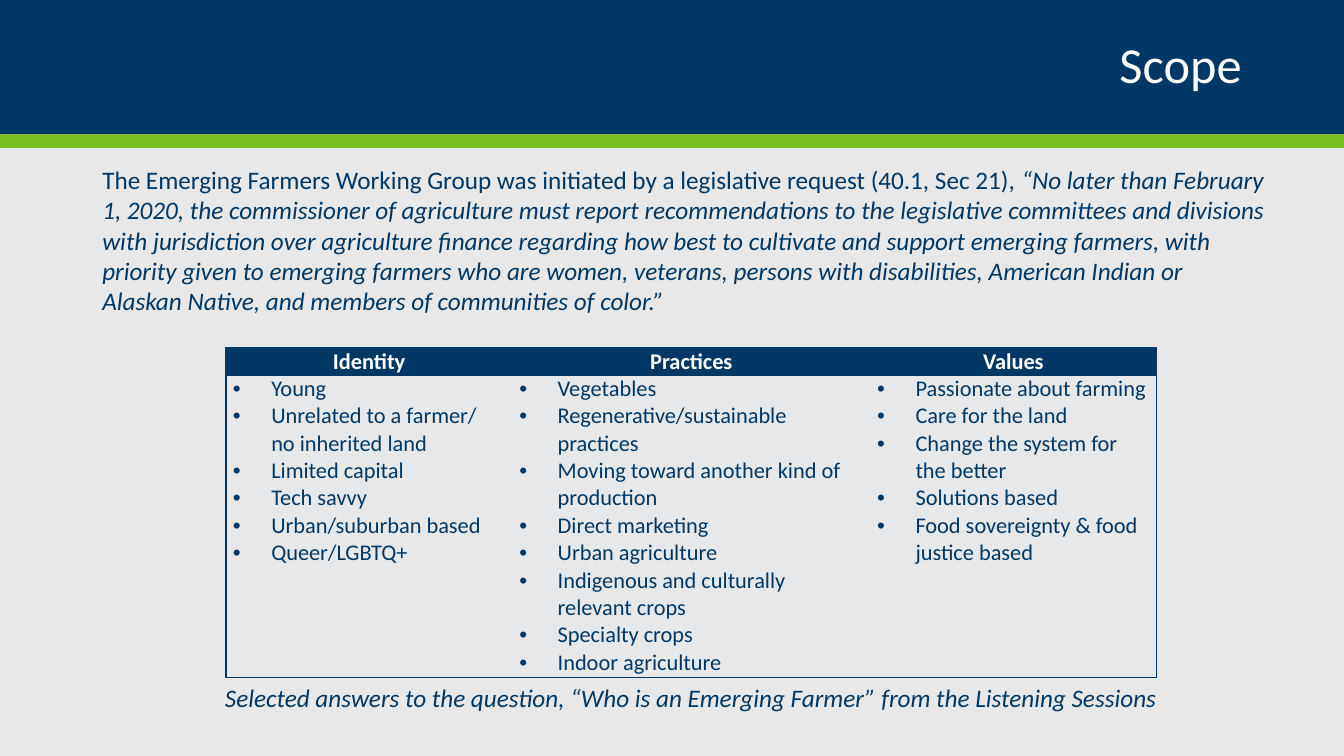
from pptx import Presentation, util as u
from pptx.dml.color import RGBColor
from pptx.enum import shapes, text
from pptx.oxml import parse_xml
from pptx.oxml.ns import nsdecls

theme = dict(navy="003865", green="78BE21", white="FFFFFF", page="E8E8E8",
             cell="E7E8EA", font="Calibri", title=36, body=18, table=16)

# A grid of 160 columns by 90 rows, each a twelfth of an inch
unit = u.Inches(1) / 12


def grid(*vals):
    return [u.Emu(round(v * unit)) for v in vals]


def style(par, size, color="navy", bold=False):
    font = par.font
    font.name, font.size, font.bold = theme["font"], u.Pt(theme[size]), bold
    font.color.rgb = RGBColor.from_string(theme[color])


deck = Presentation()
deck.slide_width, deck.slide_height = grid(160, 90)
slide = deck.slides.add_slide(deck.slide_layouts[6])
slide.background.fill.solid()
slide.background.fill.fore_color.rgb = RGBColor.from_string(theme["page"])

# Header band and stripe
for top, high, color in [(0, 16, "navy"), (16, 1.6, "green")]:
    band = slide.shapes.add_shape(shapes.MSO_SHAPE.RECTANGLE, *grid(0, top, 160, high))
    band.shadow.inherit = False
    band.fill.solid()
    band.fill.fore_color.rgb = RGBColor.from_string(theme[color])
    band.line.fill.background()

# Title, introduction and caption; each run is (wording, italic)
texts = [
    ((11, 2, 138, 12), "title", "white", [("Scope", False)]),
    ((11, 19, 141.1, 19.4), "body", "navy", [
        ("The Emerging Farmers Working Group was initiated by a legislative request "
         "(40.1, Sec 21), ", False),
        ("“No later than February 1, 2020, the commissioner of agriculture must report "
         "recommendations to the legislative committees and divisions with jurisdiction "
         "over agriculture finance regarding how best to cultivate and support emerging "
         "farmers, with priority given to emerging farmers who are women, veterans, "
         "persons with disabilities, American Indian or Alaskan Native, and members of "
         "communities of color.”", True)]),
    ((25.6, 80.6, 116.8, 4.8), "body", "navy", [
        ("Selected answers to the question, “Who is an Emerging Farmer” from the "
         "Listening Sessions", True)]),
]
for place, size, color, runs in texts:
    frame = slide.shapes.add_textbox(*grid(*place)).text_frame
    frame.word_wrap = True
    par = frame.paragraphs[0]
    style(par, size, color)
    for words, slant in runs:
        run = par.add_run()
        run.text, run.font.italic = words, slant
    if size == "title":
        frame.vertical_anchor = text.MSO_ANCHOR.MIDDLE
        par.alignment, par.line_spacing = text.PP_ALIGN.RIGHT, 0.9

# Table: one heading and one bulleted list per column
lists = {
    "Identity": ["Young", "Unrelated to a farmer/\nno inherited land", "Limited capital",
                 "Tech savvy", "Urban/suburban based", "Queer/LGBTQ+"],
    "Practices": ["Vegetables", "Regenerative/sustainable practices",
                  "Moving toward another kind of production", "Direct marketing",
                  "Urban agriculture", "Indigenous and culturally relevant crops",
                  "Specialty crops", "Indoor agriculture"],
    "Values": ["Passionate about farming", "Care for the land",
               "Change the system for the better", "Solutions based",
               "Food sovereignty & food justice based"],
}
wide, high = (34.1, 42.6, 34.1), (3.25, 36)
table = slide.shapes.add_table(2, 3, *grid(26.9, 41.4, sum(wide), sum(high))).table
for col, size in zip(table.columns, grid(*wide)):
    col.width = size
for row, size in zip(table.rows, grid(*high)):
    row.height = size

ink = f'<a:solidFill><a:srgbClr val="{theme["navy"]}"/></a:solidFill>'
for c, (head, items) in enumerate(lists.items()):
    for r, lines in enumerate([[head], items]):
        cell = table.cell(r, c)
        cell.margin_left = cell.margin_right = u.Inches(0.07)
        cell.margin_top = cell.margin_bottom = 0

        # Borders run around the outside and under the heading
        drawn = {"L": c == 0, "R": c == 2, "T": True, "B": True}
        for side, on in drawn.items():
            cell._tc.get_or_add_tcPr().append(parse_xml(
                f'<a:ln{side} {nsdecls("a")} w="{u.Pt(1)}">'
                f'{ink if on else "<a:noFill/>"}</a:ln{side}>'))
        cell.fill.solid()
        cell.fill.fore_color.rgb = RGBColor.from_string(theme["cell" if r else "navy"])

        frame = cell.text_frame
        for i, line in enumerate(lines):
            par = frame.add_paragraph() if i else frame.paragraphs[0]
            par.text = line
            style(par, "table", "navy" if r else "white", bold=not r)
            if r == 0:
                par.alignment = text.PP_ALIGN.CENTER
                continue
            props = par._p.get_or_add_pPr()
            props.set("marL", str(u.Inches(0.38)))
            props.set("indent", str(-u.Inches(0.38)))
            for mark in ('buFont {} typeface="Arial"', 'buChar {} char="•"'):
                props.insert_element_before(
                    parse_xml(f'<a:{mark.format(nsdecls("a"))}/>'), "a:defRPr")

deck.save("out.pptx")
